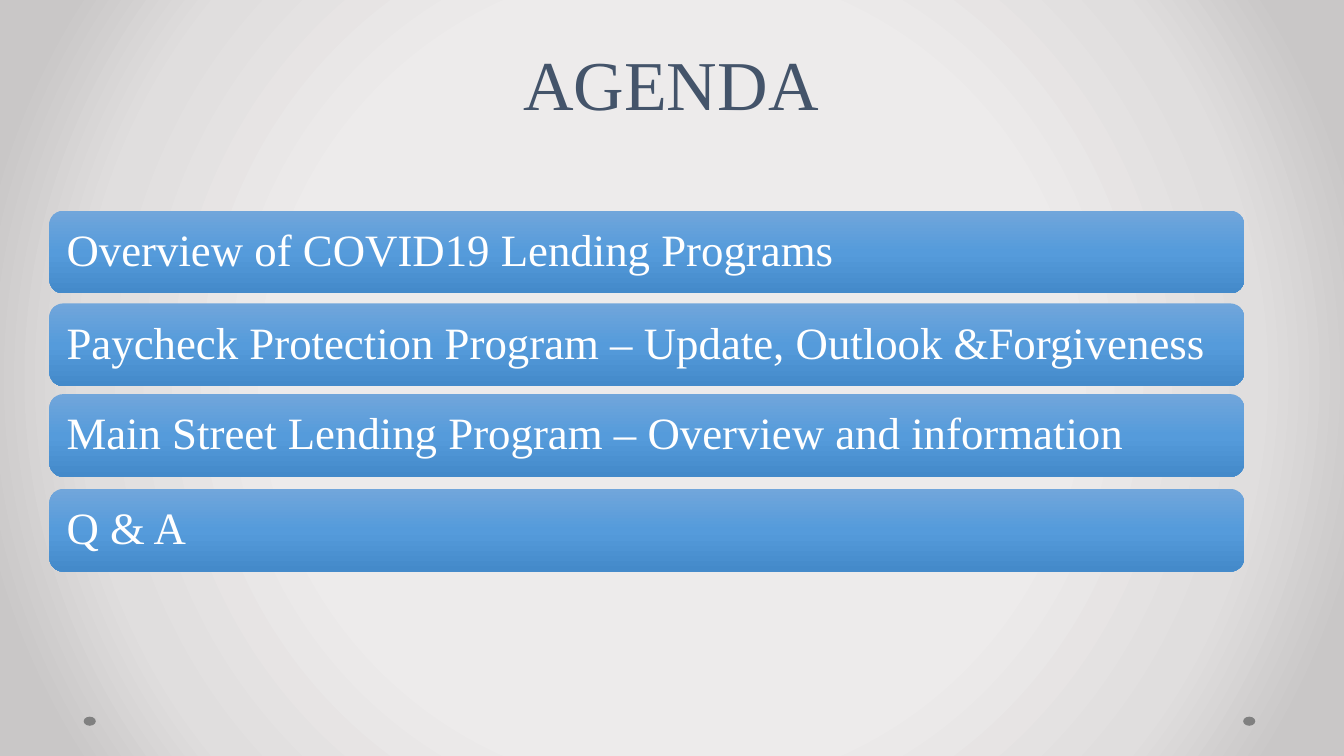
from lxml.etree import SubElement
from pptx import Presentation
from pptx.dml.color import RGBColor
from pptx.enum.shapes import MSO_SHAPE
from pptx.enum.text import MSO_ANCHOR, PP_ALIGN
from pptx.oxml.ns import qn
from pptx.util import Inches, Pt

TITLE = "AGENDA"
ITEMS = [
    (2.09, "Overview of COVID19 Lending Programs"),
    (3.01, "Paycheck Protection Program – Update, Outlook &Forgiveness"),
    (3.91, "Main Street Lending Program – Overview and information"),
    (4.85, "Q & A"),
]
DOTS = [0.83, 12.33]

FONT = "Times New Roman"
NAVY = RGBColor(0x44, 0x54, 0x6A)
WHITE = RGBColor(0xFF, 0xFF, 0xFF)
GRAY = RGBColor(0x80, 0x80, 0x80)
BLUES = [
    (0, RGBColor(0x71, 0xA6, 0xDB)),
    (50, RGBColor(0x55, 0x9B, 0xDB)),
    (100, RGBColor(0x44, 0x8A, 0xCA)),
]
GRAYS = [
    (50, RGBColor(0xED, 0xEB, 0xEB)),
    (76, RGBColor(0xE0, 0xDE, 0xDE)),
    (92, RGBColor(0xC9, 0xC7, 0xC7)),
]


def blend(fill, root, stops, round_path=False):
    """Give the fill found under root a gradient, running down or outward."""
    fill.gradient()
    grad = root.find(".//" + qn("a:gradFill"))
    grad.clear()
    grad.set("rotWithShape", "1")
    group = SubElement(grad, qn("a:gsLst"))
    for place, color in stops:
        stop = SubElement(group, qn("a:gs"), pos=str(place * 1000))
        SubElement(stop, qn("a:srgbClr"), val=str(color))
    if round_path:
        path = SubElement(grad, qn("a:path"), path="circle")
        SubElement(path, qn("a:fillToRect"),
                   {side: "50000" for side in "ltrb"})
    else:
        SubElement(grad, qn("a:lin"), ang="5400000", scaled="0")


def write(shape, text, size, color, align, anchor, inset):
    frame = shape.text_frame
    frame.text = text
    frame.word_wrap = True
    frame.vertical_anchor = anchor
    frame.margin_left = frame.margin_right = Inches(inset)
    line = frame.paragraphs[0]
    line.alignment = align
    font = line.runs[0].font
    font.name, font.size = FONT, Pt(size)
    font.color.rgb = color
    return line


def add_plain(slide, kind, *box):
    shape = slide.shapes.add_shape(kind, *map(Inches, box))
    shape.shadow.inherit = False
    shape.line.fill.background()
    return shape


def main():
    deck = Presentation()
    deck.slide_width, deck.slide_height = Inches(13.33), Inches(7.5)
    slide = deck.slides.add_slide(deck.slide_layouts[6])
    blend(slide.background.fill, slide.element, GRAYS, round_path=True)

    for left in DOTS:
        dot = add_plain(slide, MSO_SHAPE.OVAL, left, 7.11, 0.12, 0.09)
        dot.fill.solid()
        dot.fill.fore_color.rgb = GRAY

    box = map(Inches, (0.56, 0.27, 12.19, 1.01))
    title = slide.shapes.add_textbox(*box)
    line = write(title, TITLE, 50, NAVY, PP_ALIGN.CENTER,
                 MSO_ANCHOR.BOTTOM, 0.1)
    line.line_spacing = Pt(48)

    for top, text in ITEMS:
        bar = add_plain(slide, MSO_SHAPE.ROUNDED_RECTANGLE,
                        0.49, top, 11.85, 0.82)
        blend(bar.fill, bar.element, BLUES)
        line = write(bar, text, 32, WHITE, PP_ALIGN.LEFT,
                     MSO_ANCHOR.MIDDLE, 0.13)
        line.line_spacing = 0.9

    deck.save("out.pptx")


if __name__ == "__main__":
    main()
